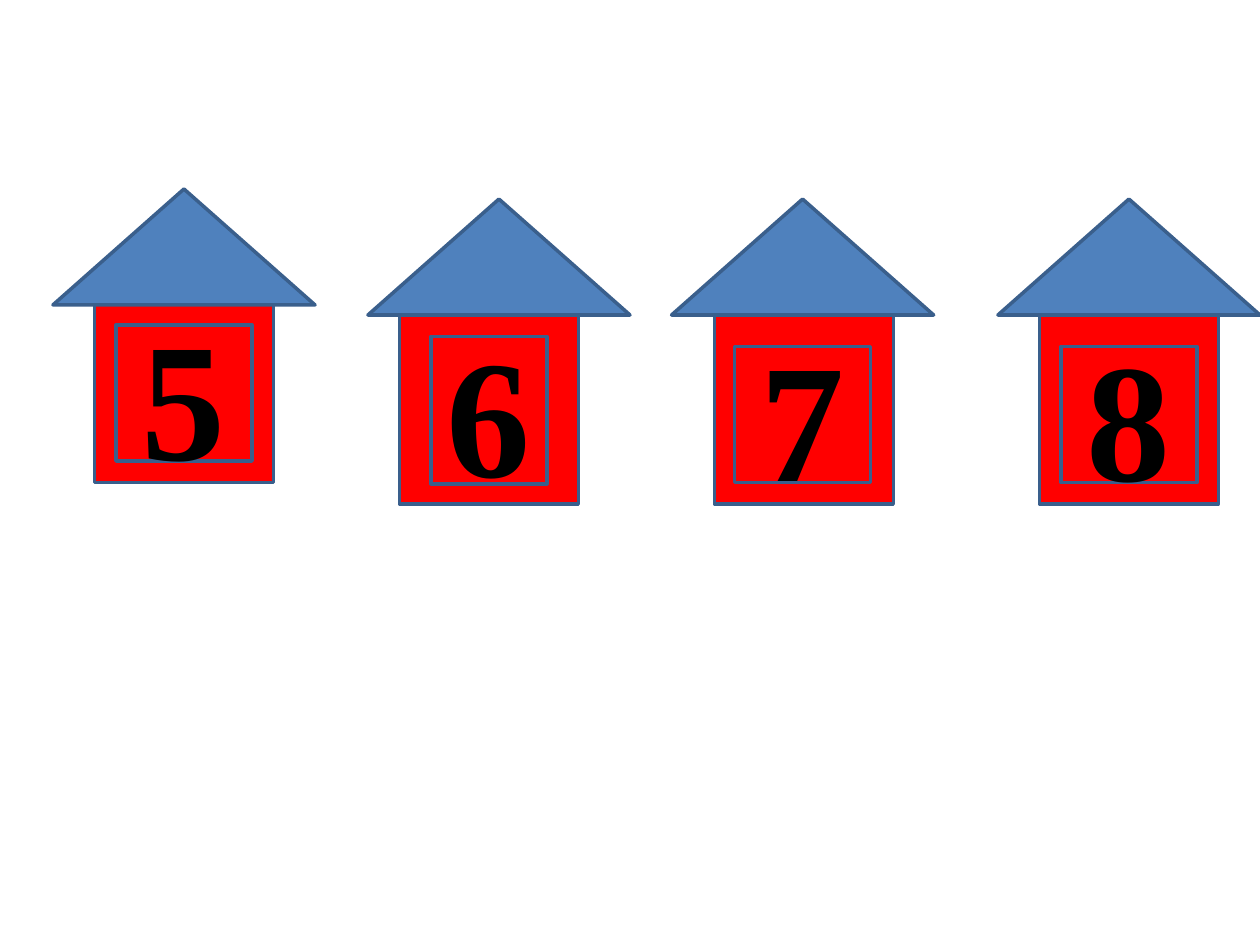
"""Build a slide with a row of four numbered houses."""
from pptx import Presentation
from pptx.dml.color import RGBColor
from pptx.enum.shapes import MSO_SHAPE as SHAPE
from pptx.enum.text import MSO_ANCHOR as ANCHOR, PP_ALIGN as ALIGN
from pptx.util import Inches, Pt

COLORS = {"wall": "FF0000", "roof": "4F81BD", "line": "3A5F8C", "text": "000000"}


def add_box(s, kind, box, fill=None):
    sp = s.shapes.add_shape(kind, *[Inches(v) for v in box])
    sp.shadow.inherit = False
    if fill:
        sp.fill.solid()
        sp.fill.fore_color.rgb = RGBColor.from_string(COLORS[fill])
    else:
        sp.fill.background()
    sp.line.color.rgb = RGBColor.from_string(COLORS["line"])
    sp.line.width = Pt(2)
    return sp


def write(sp, text, size=96, font="Times New Roman", color="text", bold=True):
    tf = sp.text_frame
    tf.word_wrap = True
    tf.vertical_anchor = ANCHOR.MIDDLE
    p = tf.paragraphs[0]
    p.alignment = ALIGN.CENTER
    r = p.add_run()
    r.text = text
    r.font.size = Pt(size)
    r.font.name = font
    r.font.bold = bold
    r.font.color.rgb = RGBColor.from_string(COLORS[color])


prs = Presentation()
prs.slide_width, prs.slide_height = Inches(10), Inches(7.5)
s = prs.slides.add_slide(prs.slide_layouts[6])

houses = [
    ("5", (0.75, 2.33), (0.42, 1.5), (0.92, 2.58, 1.08, 1.08)),
    ("6", (3.17, 2.5), (2.92, 1.58), (3.42, 2.67, 0.92, 1.17)),
    ("7", (5.67, 2.5), (5.33, 1.58), (5.83, 2.75, 1.08, 1.08)),
    ("8", (8.25, 2.5), (7.92, 1.58), (8.42, 2.75, 1.08, 1.08)),
]
for number, wall, roof, window in houses:
    add_box(s, SHAPE.RECTANGLE, (*wall, 1.42, 1.5), "wall")
    add_box(s, SHAPE.ISOSCELES_TRIANGLE, (*roof, 2.08, 0.92), "roof")
    write(add_box(s, SHAPE.RECTANGLE, window), number)

prs.save("out.pptx")
